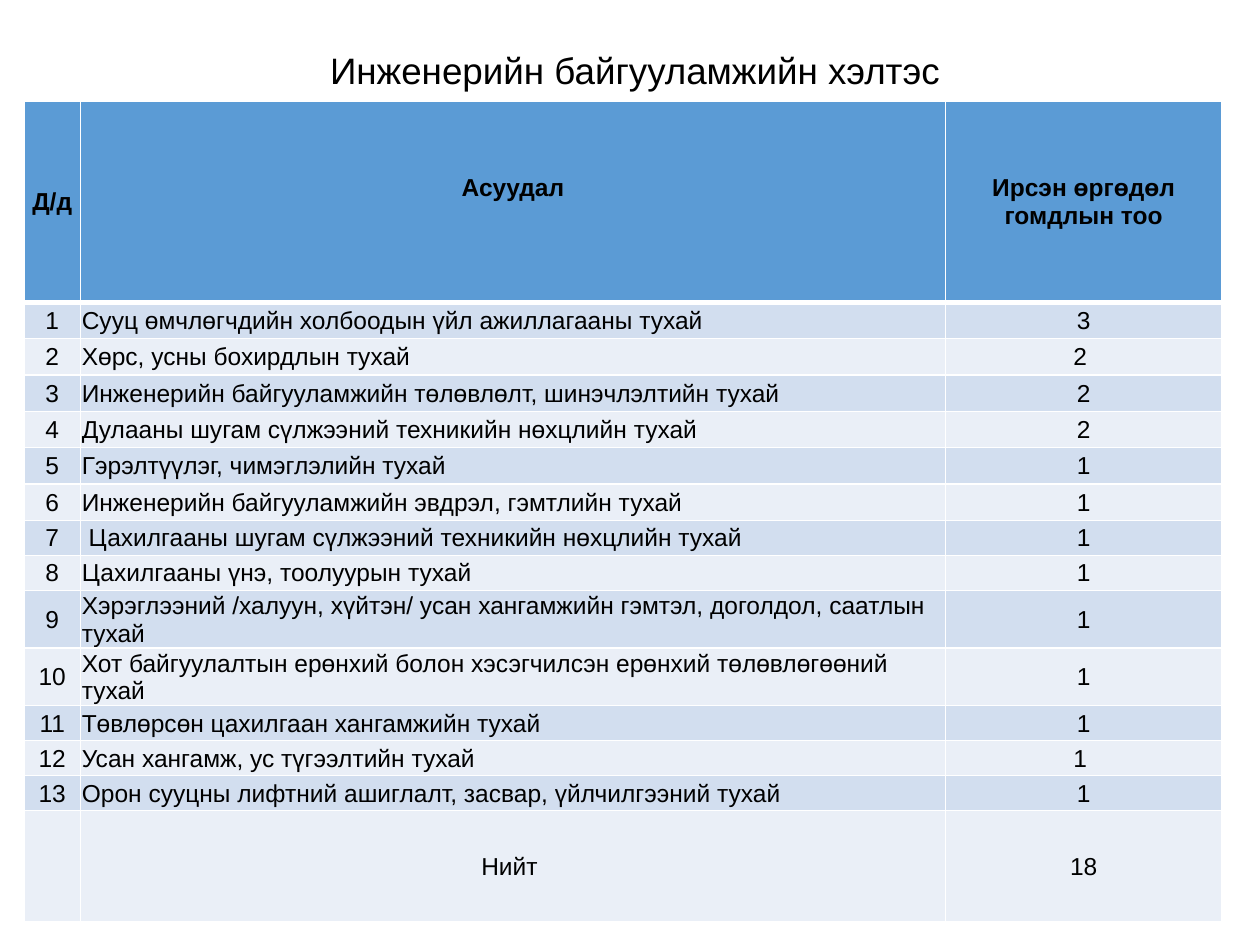
import pptx
import pptx.dml.color
import pptx.enum.text
import pptx.oxml
import pptx.oxml.ns
import pptx.util
from pptx.util import Inches

ALIGN = pptx.enum.text.PP_ALIGN
MIDDLE = pptx.enum.text.MSO_ANCHOR.MIDDLE

HEADER = ("Д/д", "Асуудал", "Ирсэн өргөдөл гомдлын тоо")
COMPLAINTS = [
    ("Сууц өмчлөгчдийн холбоодын үйл ажиллагааны тухай", "3"),
    ("Хөрс, усны бохирдлын тухай", "2 "),
    ("Инженерийн байгууламжийн төлөвлөлт, шинэчлэлтийн тухай", "2"),
    ("Дулааны шугам сүлжээний техникийн нөхцлийн тухай", "2"),
    ("Гэрэлтүүлэг, чимэглэлийн тухай", "1"),
    ("Инженерийн байгууламжийн эвдрэл, гэмтлийн тухай", "1"),
    (" Цахилгааны шугам сүлжээний техникийн нөхцлийн тухай", "1"),
    ("Цахилгааны үнэ, тоолуурын тухай", "1"),
    ("Хэрэглээний /халуун, хүйтэн/ усан хангамжийн гэмтэл, доголдол, саатлын тухай", "1"),
    ("Хот байгуулалтын ерөнхий болон хэсэгчилсэн ерөнхий төлөвлөгөөний тухай", "1"),
    ("Төвлөрсөн цахилгаан хангамжийн тухай", "1"),
    ("Усан хангамж, ус түгээлтийн тухай", "1 "),
    ("Орон сууцны лифтний ашиглалт, засвар, үйлчилгээний тухай", "1"),
]
TOTAL = ("", "Нийт ", "18")
COLUMN_WIDTHS = (0.45, 6.87, 2.2)
ROW_HEIGHTS = [1.61] + [0.29] * 6 + [0.28] * 2 + [0.46] * 2 + [0.28] * 3 + [0.89]
HEADER_FILL = "5B9BD5"
BAND_FILLS = ("EAEFF7", "D2DEEF")


def color(value):
    return pptx.dml.color.RGBColor.from_string(value)


def format_paragraph(paragraph, size, alignment, bold=False):
    paragraph.alignment = alignment
    paragraph.font.name = "Arial"
    paragraph.font.size = pptx.util.Pt(size)
    paragraph.font.bold = bold
    paragraph.font.color.rgb = color("000000")


def set_borders(cell, top, bottom):
    properties = cell._tc.get_or_add_tcPr()
    widths = {"lnL": 1, "lnR": 1, "lnT": top, "lnB": bottom}
    for position, (side, width) in enumerate(widths.items()):
        line = pptx.oxml.parse_xml(
            f'<a:{side} {pptx.oxml.ns.nsdecls("a")} w="{pptx.util.Pt(width)}">'
            f'<a:solidFill><a:srgbClr val="FFFFFF"/></a:solidFill></a:{side}>'
        )
        properties.insert(position, line)


def format_cell(cell, text, fill, alignment, bold):
    cell.text = text
    cell.vertical_anchor = MIDDLE
    cell.margin_left = cell.margin_right = cell.margin_top = Inches(0.01)
    cell.margin_bottom = 0
    cell.fill.solid()
    cell.fill.fore_color.rgb = color(fill)
    format_paragraph(cell.text_frame.paragraphs[0], 14, alignment, bold)


def place_title(slide, left, top, width, height):
    title = slide.shapes.title
    title.left, title.top, title.width, title.height = left, top, width, height
    frame = title.text_frame
    frame.text = "Инженерийн байгууламжийн хэлтэс"
    frame.auto_size = pptx.enum.text.MSO_AUTO_SIZE.NONE
    frame.vertical_anchor = MIDDLE
    frame.margin_left = Inches(0.33)
    paragraph = frame.paragraphs[0]
    paragraph.line_spacing = 0.9
    format_paragraph(paragraph, 21, ALIGN.CENTER)


def place_complaint_table(slide, left, top, width, height):
    numbered = [(str(number), *entry) for number, entry in enumerate(COMPLAINTS, 1)]
    rows = [HEADER, *numbered, TOTAL]
    table = slide.shapes.add_table(len(rows), len(HEADER), left, top, width, height).table
    for column, share in zip(table.columns, COLUMN_WIDTHS):
        column.width = int(width * share / sum(COLUMN_WIDTHS))
    for row, share in zip(table.rows, ROW_HEIGHTS):
        row.height = int(height * share / sum(ROW_HEIGHTS))

    for row_index, texts in enumerate(rows):
        is_header = row_index == 0
        is_complaint = 0 < row_index <= len(COMPLAINTS)
        fill = HEADER_FILL if is_header else BAND_FILLS[row_index % 2]
        for column_index, text in enumerate(texts):
            cell = table.cell(row_index, column_index)
            is_subject = is_complaint and column_index == 1
            alignment = ALIGN.LEFT if is_subject else ALIGN.CENTER
            format_cell(cell, text, fill, alignment, is_header)
            set_borders(cell, 3 if row_index == 1 else 1, 3 if is_header else 1)
    table.cell(0, 1).margin_bottom = Inches(0.23)


def main():
    presentation = pptx.Presentation()
    presentation.slide_width = Inches(10)
    presentation.slide_height = Inches(7.5)
    slide = presentation.slides.add_slide(presentation.slide_layouts[5])
    place_title(slide, Inches(0.14), Inches(0.19), Inches(9.57), Inches(0.78))
    place_complaint_table(slide, Inches(0.19), Inches(0.8), Inches(9.51), Inches(6.52))
    presentation.save("out.pptx")


if __name__ == "__main__":
    main()
